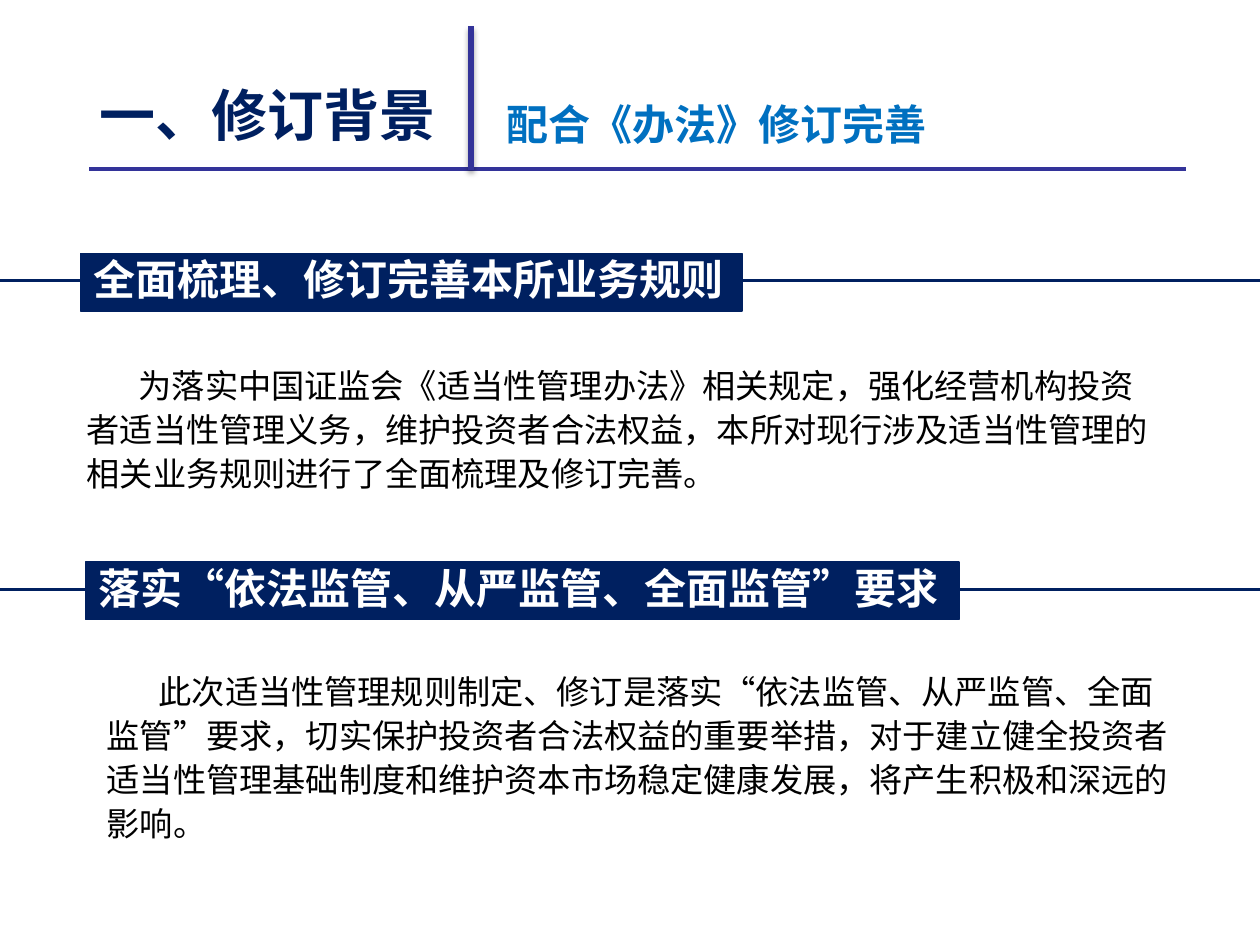
from dataclasses import dataclass
from typing import Optional

from lxml import etree
from pptx import Presentation
from pptx.dml.color import RGBColor
from pptx.enum.shapes import MSO_CONNECTOR, MSO_SHAPE
from pptx.enum.text import MSO_ANCHOR, MSO_AUTO_SIZE, PP_ALIGN
from pptx.oxml.ns import qn
from pptx.util import Pt

STRAIGHT = MSO_CONNECTOR.STRAIGHT
RECTANGLE = MSO_SHAPE.RECTANGLE
LEFT = PP_ALIGN.LEFT
MIDDLE = MSO_ANCHOR.MIDDLE
FIT_SHAPE = MSO_AUTO_SIZE.SHAPE_TO_FIT_TEXT

FONT = "Noto Sans CJK SC"
NAVY = RGBColor(0x00, 0x20, 0x60)
INDIGO = RGBColor(0x33, 0x33, 0x99)
BLUE = RGBColor(0x00, 0x70, 0xC0)
BLACK = RGBColor(0, 0, 0)
WHITE = RGBColor(255, 255, 255)
SLIDE_W, SLIDE_H = 720, 540
BANNER_H = 33.1


@dataclass
class Heading:
    text: str
    left: float
    top: float
    height: float
    size: float
    color: RGBColor


@dataclass
class Section:
    title: str
    left: float
    top: float
    width: float
    line_y: float
    left_end: float
    right_start: float
    body: str
    body_left: float
    body_top: float
    body_height: float


HEADINGS = [
    Heading("一、修订背景", 51.1, 43.2, 44.6, 32, NAVY),
    Heading("配合《办法》修订完善", 283.7, 53.3, 35.3, 24, BLUE),
]

SECTIONS = [
    Section(
        "全面梳理、修订完善本所业务规则",
        46.1, 144.7, 378, 160.2, 70.6, 184.3,
        "为落实中国证监会《适当性管理办法》相关规定，强化经营机构投资者适当性管理义务，"
        "维护投资者合法权益，本所对现行涉及适当性管理的相关业务规则进行了全面梳理及修订完善。",
        42.5, 203, 82.8,
    ),
    Section(
        "落实“依法监管、从严监管、全面监管”要求",
        49, 321.1, 499, 337, 73.4, 187.2,
        "此次适当性管理规则制定、修订是落实“依法监管、从严监管、全面监管”要求，"
        "切实保护投资者合法权益的重要举措，对于建立健全投资者适当性管理基础制度"
        "和维护资本市场稳定健康发展，将产生积极和深远的影响。",
        54, 378, 108,
    ),
]


def add_run(p, text: str, size: float, color: RGBColor, bold: bool = False) -> None:
    r = p.add_run()
    r.text = text
    r.font.size = Pt(size)
    r.font.bold = bold
    r.font.color.rgb = color
    r.font.name = FONT
    ea = etree.SubElement(r.font._element, qn("a:ea"))
    ea.set("typeface", FONT)


def add_line(s, x1: float, y1: float, x2: float, y2: float,
             color: RGBColor, width: float):
    line = s.shapes.add_connector(STRAIGHT, Pt(x1), Pt(y1), Pt(x2), Pt(y2))
    line.line.color.rgb = color
    line.line.width = Pt(width)
    return etree.SubElement(line._element.spPr, qn("a:effectLst"))


def add_shadow(effects) -> None:
    shadow = etree.SubElement(
        effects, qn("a:outerShdw"), blurRad=str(Pt(3.1)), dist=str(Pt(1.8)),
        dir="5400000", rotWithShape="0")
    color = etree.SubElement(shadow, qn("a:srgbClr"), val=str(BLACK))
    etree.SubElement(color, qn("a:alpha"), val="35000")


def add_text_box(s, left: float, top: float, width: float, height: float,
                 inset: Optional[tuple[float, float]] = None):
    tf = s.shapes.add_textbox(Pt(left), Pt(top), Pt(width), Pt(height)).text_frame
    tf.word_wrap = True
    tf.auto_size = FIT_SHAPE
    if inset:
        tf.margin_left = tf.margin_right = Pt(inset[0])
        tf.margin_top = tf.margin_bottom = Pt(inset[1])
    return tf.paragraphs[0]


def add_heading(s, h: Heading) -> None:
    p = add_text_box(s, h.left, h.top, 280.8, h.height, (5.8, 2.9))
    add_run(p, h.text, h.size, h.color, True)


def add_banner(s, sec: Section) -> None:
    sp = s.shapes.add_shape(RECTANGLE, Pt(sec.left), Pt(sec.top),
                            Pt(sec.width), Pt(BANNER_H))
    sp.shadow.inherit = False
    sp.fill.solid()
    sp.fill.fore_color.rgb = NAVY
    sp.line.color.rgb = NAVY
    sp.line.width = Pt(0.75)
    tf = sp.text_frame
    tf.word_wrap = False
    tf.auto_size = FIT_SHAPE
    tf.vertical_anchor = MIDDLE
    p = tf.paragraphs[0]
    p.alignment = LEFT
    p.line_spacing = 0.9
    add_run(p, sec.title, 24, WHITE, True)


def add_section(s, sec: Section) -> None:
    p = add_text_box(s, sec.body_left, sec.body_top, 629.3, sec.body_height)
    p.line_spacing = Pt(25)
    p._p.get_or_add_pPr().set("indent", str(Pt(29.7)))
    add_run(p, sec.body, 19, BLACK)
    for x1, x2 in ((0, sec.left_end), (sec.right_start, SLIDE_W)):
        add_line(s, x1, sec.line_y, x2, sec.line_y, NAVY, 1.5)
    add_banner(s, sec)


def main() -> None:
    prs = Presentation()
    prs.slide_width, prs.slide_height = Pt(SLIDE_W), Pt(SLIDE_H)
    s = prs.slides.add_slide(prs.slide_layouts[6])
    add_line(s, 51.1, 96.5, 677.5, 96.5, INDIGO, 2)
    add_shadow(add_line(s, 269.3, 15.1, 269.3, 97.2, INDIGO, 3.5))
    for h in HEADINGS:
        add_heading(s, h)
    for sec in SECTIONS:
        add_section(s, sec)
    prs.save("out.pptx")


if __name__ == "__main__":
    main()
